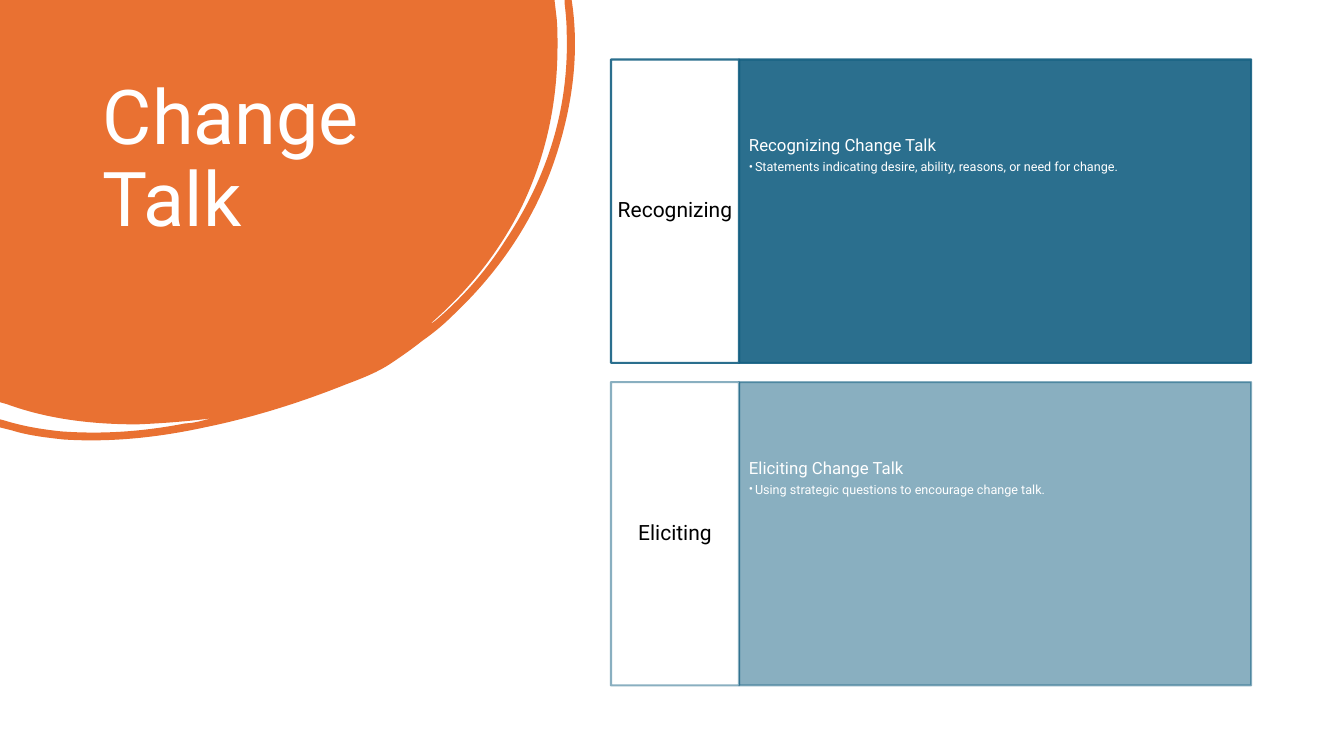
"""Build the Change Talk slide."""
import pptx
import pptx.dml.color
import pptx.enum.shapes
import pptx.enum.text
import pptx.oxml
import pptx.oxml.ns
import pptx.util
from pptx.util import Inches

TITLE = "Change Talk"
ROWS = [
    ("Recognizing", "Recognizing Change Talk",
     "Statements indicating desire, ability, reasons, or need for change.", 90),
    ("Eliciting", "Eliciting Change Talk",
     "Using strategic questions to encourage change talk.", 50),
]
COLORS = {"orange": "E97132", "teal": "156082", "white": "FFFFFF", "black": "000000"}
FONT = "Roboto"
BLOB = [
    (5.5, 0), (5.52, 0.17),
    (5.53, 0.26, 5.53, 0.36, 5.53, 0.45), (5.53, 1.01, 5.42, 1.54, 5.18, 2.04),
    (4.96, 2.49, 4.65, 2.88, 4.27, 3.21), (4.29, 3.21, 4.3, 3.19, 4.32, 3.18),
    (4.59, 2.95, 4.82, 2.69, 5.01, 2.39), (5.43, 1.76, 5.65, 1.07, 5.62, 0.3),
    (5.62, 0.21, 5.61, 0.12, 5.6, 0.03), (5.6, 0), (5.67, 0), (5.68, 0.07),
    (5.74, 0.54, 5.68, 1.02, 5.53, 1.5), (5.33, 2.14, 4.97, 2.68, 4.48, 3.14),
    (4.39, 3.23, 4.29, 3.31, 4.19, 3.38), (4.09, 3.46, 3.99, 3.53, 3.87, 3.61),
    (3.75, 3.69, 3.6, 3.75, 3.44, 3.81), (2.99, 3.99, 2.52, 4.14, 2.03, 4.24),
    (1.57, 4.34, 1.1, 4.39, 0.63, 4.36), (0.45, 4.34, 0.28, 4.32, 0.12, 4.27),
    (0, 4.24), (0, 4.16), (0.04, 4.17),
    (0.23, 4.23, 0.42, 4.26, 0.61, 4.28), (1.03, 4.31, 1.43, 4.28, 1.84, 4.2),
    (1.89, 4.2, 1.93, 4.19, 1.98, 4.18), (2.02, 4.17, 2.06, 4.16, 2.1, 4.15),
    (1.86, 4.18, 1.61, 4.2, 1.36, 4.21), (0.92, 4.21, 0.48, 4.16, 0.07, 4.01),
    (0, 3.99),
]
LEFT, TOP, LABEL_W, PANEL_W, ROW_H, PITCH = 6.06, 0.59, 1.27, 5.08, 3.01, 3.2
ALIGN = pptx.enum.text.PP_ALIGN
ANCHOR = pptx.enum.text.MSO_ANCHOR
SPACE = pptx.oxml.ns.nsdecls("a")


def apply(thing, **values):
    for name, value in values.items():
        setattr(thing, name, value)


def paint(fill, color, alpha=100):
    fill.solid()
    fill.fore_color.rgb = pptx.dml.color.RGBColor.from_string(COLORS[color])
    if alpha < 100:
        tint = next(fill._xPr.iter(pptx.oxml.ns.qn("a:srgbClr")))
        tint.append(pptx.oxml.parse_xml(f'<a:alpha {SPACE} val="{alpha * 1000}"/>'))


def frame(text, anchor, side, edge):
    apply(text, word_wrap=True, auto_size=pptx.enum.text.MSO_AUTO_SIZE.NONE,
          vertical_anchor=anchor, margin_left=Inches(side), margin_right=Inches(side),
          margin_top=Inches(edge), margin_bottom=Inches(edge))


def write(para, words, size, color, align=ALIGN.LEFT, after=0):
    apply(para, alignment=align, line_spacing=0.9,
          space_before=pptx.util.Pt(0), space_after=pptx.util.Pt(after))
    run = para.add_run()
    run.text = words
    apply(run.font, name=FONT, size=pptx.util.Pt(size))
    run.font.color.rgb = pptx.dml.color.RGBColor.from_string(COLORS[color])


def bullet(para):
    props = para._p.get_or_add_pPr()
    indent = Inches(0.06)
    props.set("marL", str(indent))
    props.set("indent", str(-indent))
    for mark in (f'<a:buFont {SPACE} typeface="{FONT}"/>', f'<a:buChar {SPACE} char="•"/>'):
        props.append(pptx.oxml.parse_xml(mark))


def outline(shapes, parts):
    """Draw a closed outline; parts of six numbers become curves."""
    pen = shapes.build_freeform(0, 0)
    pen.add_line_segments([(Inches(part[i]), Inches(part[i + 1]))
                           for part in parts for i in range(0, len(part), 2)])
    shape = pen.convert_to_shape()
    lines = shape._element.iter(pptx.oxml.ns.qn("a:lnTo"))
    lines = iter(list(lines))
    for part in parts:
        group = [next(lines) for _ in range(len(part) // 2)]
        if len(group) == 3:
            curve = pptx.oxml.parse_xml(f"<a:cubicBezTo {SPACE}/>")
            group[0].addprevious(curve)
            for line in group:
                curve.append(line[0])
                line.getparent().remove(line)
    return shape


def box(shapes, left, top, width, fill, alpha, shade):
    rect = shapes.add_shape(pptx.enum.shapes.MSO_SHAPE.RECTANGLE,
                            Inches(left), Inches(top), Inches(width), Inches(ROW_H))
    rect.shadow.inherit = False
    paint(rect.fill, fill, alpha)
    paint(rect.line.fill, "teal", shade)
    rect.line.width = pptx.util.Pt(1.5)
    return rect.text_frame


def main():
    deck = pptx.Presentation()
    apply(deck, slide_width=Inches(13.33), slide_height=Inches(7.5))
    slide = deck.slides.add_slide(deck.slide_layouts[5])
    shapes = slide.shapes

    blob = outline(shapes, BLOB)
    blob.shadow.inherit = False
    paint(blob.fill, "orange")
    blob.line.fill.background()

    title = shapes.title
    apply(title, left=Inches(0.92), top=Inches(0.74),
          width=Inches(3.52), height=Inches(2.22))
    frame(title.text_frame, ANCHOR.TOP, 0.1, 0.05)
    write(title.text_frame.paragraphs[0], TITLE, 54, "white", after=6)
    shapes._spTree.append(title._element)

    for row, (label, head, point, alpha) in enumerate(ROWS):
        top = TOP + row * PITCH
        panel = box(shapes, LEFT + LABEL_W, top, PANEL_W, "teal", alpha, alpha)
        frame(panel, ANCHOR.TOP, 0.1, 0.77)
        write(panel.paragraphs[0], head, 12, "white", after=4)
        item = panel.add_paragraph()
        item.level = 1
        write(item, point, 9, "white", after=1.35)
        bullet(item)

        tag = box(shapes, LEFT, top, LABEL_W, "white", 100, alpha)
        frame(tag, ANCHOR.MIDDLE, 0.05, 0.3)
        write(tag.paragraphs[0], label, 15, "black", ALIGN.CENTER, 5.25)

    deck.save("out.pptx")


if __name__ == "__main__":
    main()
